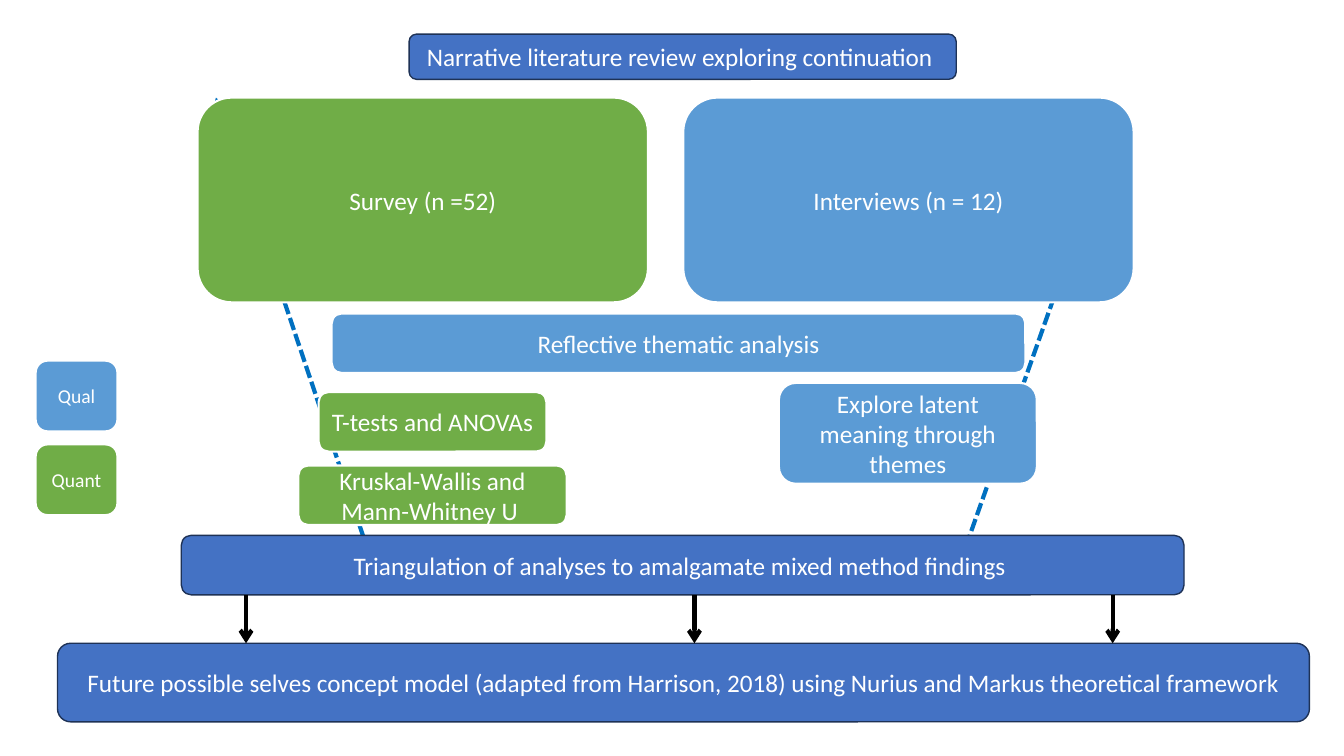
from collections import namedtuple

from lxml.etree import SubElement
from pptx import Presentation
from pptx.dml.color import RGBColor
from pptx.enum.dml import MSO_LINE_DASH_STYLE as Dash
from pptx.enum.shapes import MSO_CONNECTOR as Connector, MSO_SHAPE as Shape
from pptx.enum.text import MSO_ANCHOR as Anchor, PP_ALIGN as Align
from pptx.oxml.ns import qn
from pptx.util import Cm, Pt

MIXED, QUAL, QUANT = "4472C4", "5B9BD5", "70AD47"
WHITE, BLACK, NAVY, GUIDE = "FFFFFF", "000000", "1E3256", "0070C0"
ROW_HEIGHT = 1.5

Box = namedtuple("Box", "left top width height")


def paint(colour_format, hex_colour):
    colour_format.rgb = RGBColor.from_string(hex_colour)


def inside(box, dx, dy, width, height):
    """Return a box offset from the top left corner of another one."""
    return Box(box.left + dx, box.top + dy, width, height)


def add_step(slide, box, label, fill, size=18):
    step = slide.shapes.add_shape(Shape.ROUNDED_RECTANGLE, *map(Cm, box))
    step.shadow.inherit = False
    step.fill.solid()
    paint(step.fill.fore_color, fill)
    paint(step.line.color, NAVY if fill == MIXED else WHITE)
    step.line.width = Pt(1 if fill == MIXED else 1.5)

    frame = step.text_frame
    frame.word_wrap = True
    frame.vertical_anchor = Anchor.MIDDLE
    frame.text = label
    paragraph = frame.paragraphs[0]
    paragraph.alignment = Align.CENTER
    font = paragraph.runs[0].font
    font.name, font.size = "Calibri", Pt(size)
    paint(font.color, WHITE)


def add_arrow(slide, start, end, colour, dash=None, ends=("tailEnd",)):
    arrow = slide.shapes.add_connector(Connector.STRAIGHT, *map(Cm, start + end))
    paint(arrow.line.color, colour)
    arrow.line.width = Pt(3)
    if dash:
        arrow.line.dash_style = dash
    properties = arrow._element.spPr
    for end_name in ends:
        SubElement(properties.find(qn("a:ln")), qn(f"a:{end_name}"), type="arrow")
    SubElement(properties, qn("a:effectLst"))


def add_guides(slide, box):
    """Draw the dashed arrows that funnel both methods into the triangulation."""
    for start, end in (((22.37, 1.5), (18.66, 11.99)), ((0, 0), (3.91, 11.64))):
        points = [(box.left + x, box.top + y) for x, y in (start, end)]
        add_arrow(slide, *points, GUIDE, Dash.SQUARE_DOT, ("headEnd", "tailEnd"))


def add_data_collection(slide, box):
    add_step(slide, inside(box, 5.33, 0, 13.79, 1.14),
             "Narrative literature review exploring continuation ", MIXED)
    width, height = 11.35, 5.16
    methods = (("Survey (n =52)", QUANT, 0),
               ("Interviews (n = 12)", QUAL, box.width - width))
    for label, fill, dx in methods:
        add_step(slide, inside(box, dx, box.height - height, width, height),
                 label, fill)


def add_analysis(slide, box):
    add_step(slide, inside(box, 0.84, 0, 17.48, ROW_HEIGHT),
             "Reflective thematic analysis", QUAL)
    add_step(slide, inside(box, 0.51, 1.98, 5.74, ROW_HEIGHT),
             "T-tests and ANOVAs ", QUANT)
    add_step(slide, inside(box, 0, box.height - ROW_HEIGHT, 6.76, ROW_HEIGHT),
             "Kruskal-Wallis and Mann-Whitney U ", QUANT)
    add_step(slide, inside(box, box.width - 6.5, 1.75, 6.5, 2.54),
             "Explore latent meaning through themes", QUAL)


def add_synthesis(slide, box):
    model_height = 1.98
    model_top = box.height - model_height
    add_step(slide, inside(box, 0, model_top, box.width, model_height),
             "Future possible selves concept model (adapted from Harrison, 2018) "
             "using Nurius and Markus theoretical framework", MIXED)
    add_step(slide, inside(box, 3.12, 0, 25.27, ROW_HEIGHT),
             "Triangulation of analyses to amalgamate mixed method findings ", MIXED)
    for dx in (4.75, 16.05, 26.59):
        x = box.left + dx
        add_arrow(slide, (x, box.top + ROW_HEIGHT), (x, box.top + model_top), BLACK)


def add_legend(slide, box):
    key_height = 1.78
    keys = (("Qual", QUAL, 0), ("Quant", QUANT, box.height - key_height))
    for label, fill, dy in keys:
        add_step(slide, inside(box, 0, dy, box.width, key_height), label, fill, 14)


def main():
    deck = Presentation()
    deck.slide_width, deck.slide_height = Cm(33.87), Cm(19.05)
    slide = deck.slides.add_slide(deck.slide_layouts[6])

    add_guides(slide, Box(5.44, 2.46, 22.37, 11.99))
    add_data_collection(slide, Box(4.98, 0.86, 23.59, 6.76))
    add_analysis(slide, Box(7.52, 7.9, 18.61, 5.33))
    add_synthesis(slide, Box(1.45, 13.49, 31.55, 4.7))
    add_legend(slide, Box(0.9, 9.09, 2.06, 3.89))

    deck.save("out.pptx")


if __name__ == "__main__":
    main()
